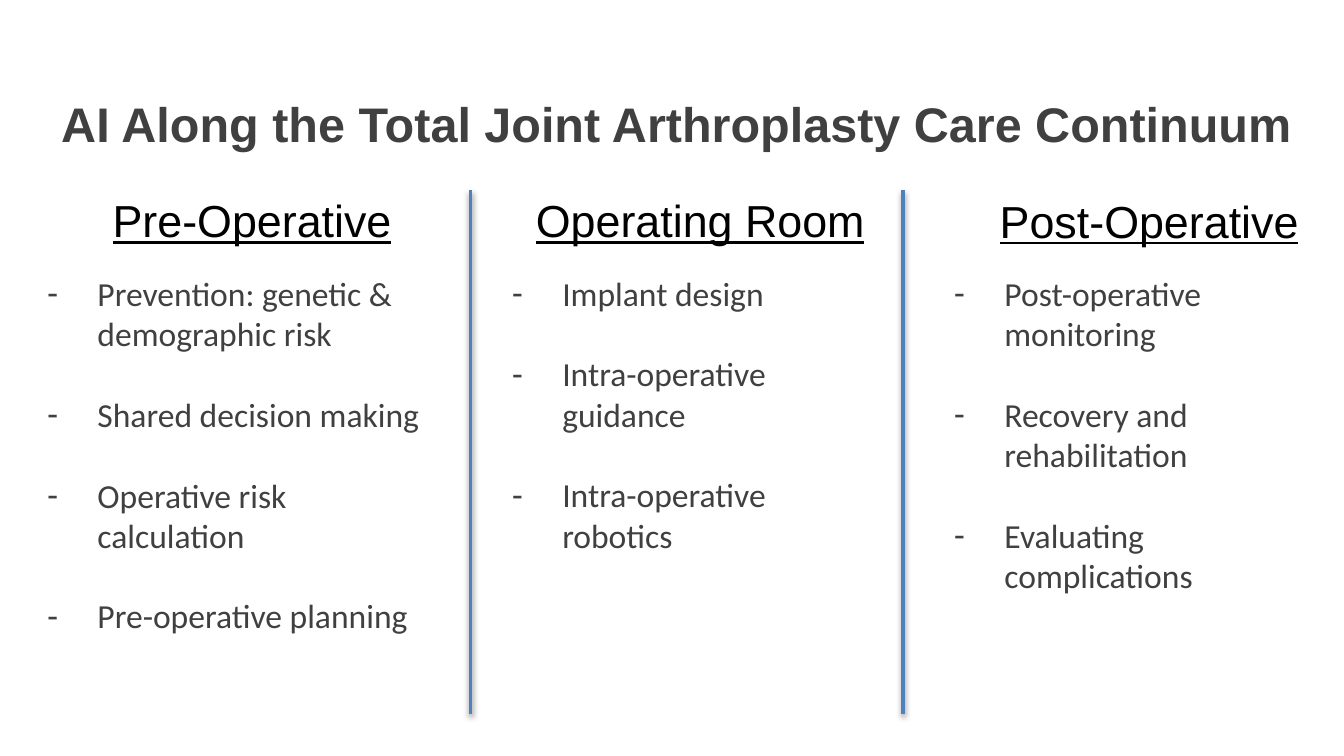
from dataclasses import dataclass

from lxml.etree import SubElement
from pptx import Presentation
from pptx.dml.color import RGBColor
from pptx.enum.shapes import MSO_CONNECTOR
from pptx.enum.text import MSO_ANCHOR, MSO_AUTO_SIZE, PP_ALIGN
from pptx.oxml.ns import qn
from pptx.util import Pt

PX = 4572


@dataclass(frozen=True)
class Theme:
    """Hold the fonts, type sizes and colours of the slide."""
    heading_font: str = "Arial"
    body_font: str = "Calibri"
    title_size: int = 26
    heading_size: int = 24
    body_size: int = 18
    item_gap: float = 21.6
    rule_width: int = 2
    text: str = "404040"
    heading: str = "000000"
    rule: str = "4F81BD"
    shadow: str = "000000"


THEME = Theme()
TITLE_FORMAT = {"name": THEME.heading_font, "size": Pt(THEME.title_size), "bold": True}
HEADING_FORMAT = {"name": THEME.heading_font, "size": Pt(THEME.heading_size), "underline": True}
BODY_FORMAT = {"name": THEME.body_font, "size": Pt(THEME.body_size)}

SLIDE_WIDTH, SLIDE_HEIGHT = 2000, 1125
TITLE = "AI Along the Total Joint Arthroplasty Care Continuum"
TITLE_BOX = (0, 89, 2016, 188)
COLUMNS = [
    ("Pre-Operative", (117, 277, 516, 100), (50, 396, 600, 666),
     ["Prevention: genetic & demographic risk", "Shared decision making",
      "Operative risk calculation", "Pre-operative planning"]),
    ("Operating Room", (750, 277, 584, 100), (742, 396, 558, 666),
     ["Implant design", "Intra-operative guidance", "Intra-operative robotics"]),
    ("Post-Operative", (1452, 278, 516, 100), (1400, 396, 588, 666),
     ["Post-operative monitoring", "Recovery and rehabilitation",
      "Evaluating complications"]),
]
RULES_X = (700, 1344)
RULE_TOP, RULE_BOTTOM = 283, 1062
INDENT = 75


def place(shape, box):
    """Move and size a shape to a box given in px."""
    for name, length in zip(("left", "top", "width", "height"), box):
        setattr(shape, name, length * PX)


def set_frame(shape, anchor):
    """Wrap the text of a shape at a fixed size and return its frame."""
    frame = shape.text_frame
    settings = {"word_wrap": True, "auto_size": MSO_AUTO_SIZE.NONE, "vertical_anchor": anchor}
    for name, value in settings.items():
        setattr(frame, name, value)
    return frame


def write(paragraph, text, formats, color):
    """Add one formatted run to a paragraph."""
    run = paragraph.add_run()
    run.text = text
    for name, value in formats.items():
        setattr(run.font, name, value)
    run.font.color.rgb = RGBColor.from_string(color)


def fill_line(shape, text, formats, color, anchor):
    """Write one centred line of text into a shape."""
    paragraph = set_frame(shape, anchor).paragraphs[0]
    paragraph.alignment = PP_ALIGN.CENTER
    write(paragraph, text, formats, color)


def fill_list(shape, items):
    """Write a dashed list into a shape."""
    frame = set_frame(shape, MSO_ANCHOR.TOP)
    for index, item in enumerate(items):
        paragraph = frame.add_paragraph() if index else frame.paragraphs[0]
        paragraph.alignment = PP_ALIGN.LEFT
        paragraph.space_before = Pt(THEME.item_gap if index else 0)
        properties = paragraph._p.get_or_add_pPr()
        properties.set("marL", str(INDENT * PX))
        properties.set("indent", str(-INDENT * PX))
        SubElement(properties, qn("a:buFont"), typeface=THEME.heading_font)
        SubElement(properties, qn("a:buChar"), char="-")
        write(paragraph, item, BODY_FORMAT, THEME.text)


def add_text_box(slide, box):
    """Add an empty text box at a box given in px."""
    return slide.shapes.add_textbox(*(length * PX for length in box))


def add_rule(slide, x):
    """Add a vertical rule with a soft shadow between two columns."""
    rule = slide.shapes.add_connector(
        MSO_CONNECTOR.STRAIGHT, x * PX, RULE_TOP * PX, x * PX, RULE_BOTTOM * PX)
    rule.line.color.rgb = RGBColor.from_string(THEME.rule)
    rule.line.width = Pt(THEME.rule_width)
    effects = SubElement(rule._element.spPr, qn("a:effectLst"))
    shadow = SubElement(effects, qn("a:outerShdw"), blurRad=str(Pt(3.1)),
                        dist=str(Pt(1.6)), dir="5400000", rotWithShape="0")
    color = SubElement(shadow, qn("a:srgbClr"), val=THEME.shadow)
    SubElement(color, qn("a:alpha"), val="38000")


def main():
    """Build the care continuum slide and save it."""
    presentation = Presentation()
    presentation.slide_width = SLIDE_WIDTH * PX
    presentation.slide_height = SLIDE_HEIGHT * PX
    slide = presentation.slides.add_slide(presentation.slide_layouts[1])
    title, body = slide.placeholders
    place(title, TITLE_BOX)
    fill_line(title, TITLE, TITLE_FORMAT, THEME.text, MSO_ANCHOR.MIDDLE)
    for x in RULES_X:
        add_rule(slide, x)
    for index, (heading, heading_box, list_box, items) in enumerate(COLUMNS):
        fill_line(add_text_box(slide, heading_box), heading, HEADING_FORMAT,
                  THEME.heading, MSO_ANCHOR.TOP)
        list_shape = add_text_box(slide, list_box) if index else body
        place(list_shape, list_box)
        fill_list(list_shape, items)
    presentation.save("out.pptx")


if __name__ == "__main__":
    main()
